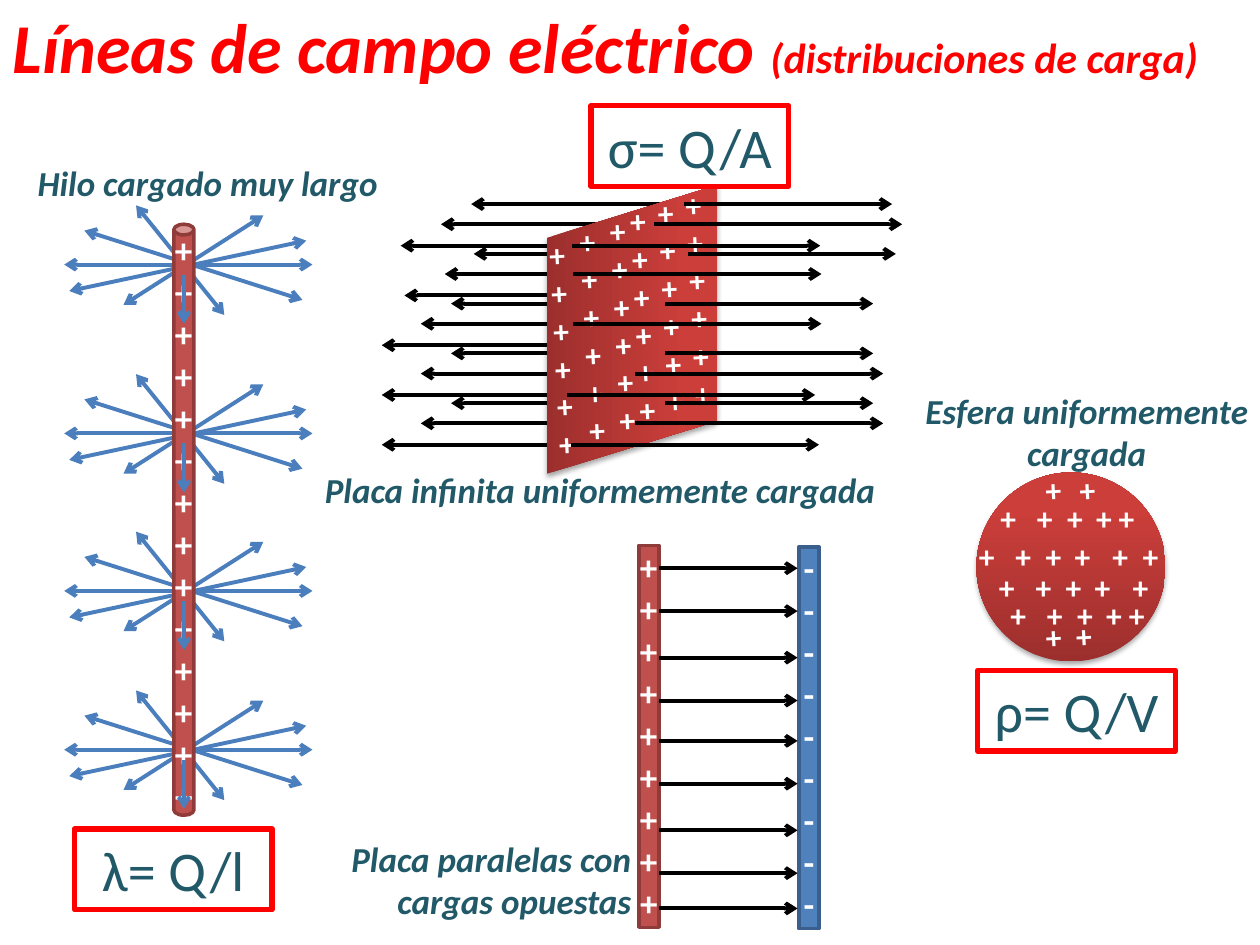
from collections import namedtuple

from lxml.etree import SubElement
from pptx import Presentation
from pptx.dml.color import RGBColor
from pptx.enum.shapes import MSO_CONNECTOR, MSO_SHAPE
from pptx.enum.text import MSO_ANCHOR, MSO_AUTO_SIZE, PP_ALIGN
from pptx.oxml.ns import qn
from pptx.util import Inches, Pt

COLORS = {
    "title": "FF0000", "label": "215968", "mark": "FFFFFF", "field": "000000",
    "ray": "4B7EBC", "positive": "C0504D", "positive edge": "8E3B39",
    "negative": "4F81BD", "negative edge": "3A5F8C",
    "dark red": "9C2F2D", "bright red": "CB3E3A", "shadow": "000000",
}
COLUMNS, ROWS = 100, 75
CELL = Inches(10) // COLUMNS
Box = namedtuple("Box", "left top width height")


def color(name):
    """Return the named colour."""
    return RGBColor.from_string(COLORS[name])


def within(box, left, top, width, height):
    """Return a box placed by its offset in cells from another box."""
    return Box(box.left + left, box.top + top, width, height)


def lengths(box):
    """Turn the cells of a box into slide lengths."""
    return [round(value * CELL) for value in box]


def write(shape, *runs, size=20, ink="label", bold=False, italic=False,
          align=PP_ALIGN.LEFT, anchor=MSO_ANCHOR.TOP, inset=None, tabs=()):
    """Put text in a shape; a run is a string or a (string, size) pair."""
    frame = shape.text_frame
    frame.word_wrap = True
    frame.auto_size = MSO_AUTO_SIZE.NONE
    frame.vertical_anchor = anchor
    if inset is not None:
        frame.margin_left = frame.margin_right = Inches(inset)
        frame.margin_top = frame.margin_bottom = Inches(inset)
    paragraph = frame.paragraphs[0]
    paragraph.alignment = align
    if tabs:
        stops = SubElement(paragraph._p.get_or_add_pPr(), qn("a:tabLst"))
        for position in tabs:
            SubElement(stops, qn("a:tab"), pos=str(round(position * CELL)), algn="l")
    for item in runs:
        text, points = (item, size) if isinstance(item, str) else item
        run = paragraph.add_run()
        run.text = text
        run.font.name = "Calibri"
        run.font.size = Pt(points)
        run.font.bold = bold
        run.font.italic = italic
        run.font.color.rgb = color(ink)


def add_text(slide, box, text, rotation=0, **formats):
    """Add a text box."""
    shape = slide.shapes.add_textbox(*lengths(box))
    shape.rotation = rotation
    write(shape, text, **formats)


def add_caption(slide, box, text, align=PP_ALIGN.LEFT):
    """Add the bold italic name of a charge distribution."""
    add_text(slide, box, text, bold=True, italic=True, align=align)


def add_marks(slide, box, text, **formats):
    """Add white charge marks."""
    add_text(slide, box, text, size=18, ink="mark", bold=True, **formats)


def add_body(slide, kind, box, fill=None, edge=None, width=2):
    """Add a preset shape with a flat fill and edge."""
    shape = slide.shapes.add_shape(kind, *lengths(box))
    shape.shadow.inherit = False
    if fill:
        shape.fill.solid()
        shape.fill.fore_color.rgb = color(fill)
    else:
        shape.fill.background()
    if edge:
        shape.line.color.rgb = color(edge)
        shape.line.width = Pt(width)
    else:
        shape.line.fill.background()
    return shape


def add_charged_body(slide, kind, box):
    """Add a red gradient shape with a soft shadow below."""
    shape = add_body(slide, kind, box)
    shape.fill.gradient()
    shape.fill.gradient_angle = 90
    stops = shape.fill.gradient_stops
    for stop, position, name in zip(stops, (0, 0.8), ("dark red", "bright red")):
        stop.position = position
        stop.color.rgb = color(name)
    effects = shape.element.spPr.find(qn("a:effectLst"))
    shadow = SubElement(effects, qn("a:outerShdw"), blurRad=str(Pt(3.1)),
                        dist=str(Pt(1.8)), dir="5400000", rotWithShape="0")
    ink = SubElement(shadow, qn("a:srgbClr"), val=COLORS["shadow"])
    SubElement(ink, qn("a:alpha"), val="35000")
    return shape


def add_arrow(slide, box, start, end, ink="field", double=False):
    """Add an arrow pointing at its start, or at both ends."""
    points = [round((origin + offset) * CELL) for point in (start, end)
              for origin, offset in zip(box, point)]
    arrow = slide.shapes.add_connector(MSO_CONNECTOR.STRAIGHT, *points)
    arrow.line.color.rgb = color(ink)
    arrow.line.width = Pt(2.25)
    line = arrow.line._get_or_add_ln()
    for tag in ("a:headEnd", "a:tailEnd") if double else ("a:headEnd",):
        SubElement(line, qn(tag), type="arrow")
    SubElement(arrow.element.spPr, qn("a:effectLst"))


def add_formula(slide, box, text):
    """Add a red frame with a charge density formula."""
    frame = add_body(slide, MSO_SHAPE.RECTANGLE, box, edge="title", width=3)
    write(frame, text, size=32, align=PP_ALIGN.CENTER)


def add_title(slide, box):
    """Place and fill the title placeholder."""
    title = slide.shapes.title
    title.left, title.top, title.width, title.height = lengths(box)
    write(title, "Líneas de campo eléctrico ", ("(distribuciones de carga)", 24),
          size=40, ink="title", bold=True, italic=True)


def add_wire(slide, box):
    """Draw the long charged wire with its fans of field lines."""
    centers = (8.7, 22.1, 34.6, 47.2)
    rays = (((0, 0), (19.7, 0)), ((0.4, 2.1), (19.2, -1.9)),
            ((1.6, -2.7), (18.9, 2.8)), ((4.7, 3.2), (15.8, -3.9)),
            ((5.7, -4.7), (12.7, 4)))
    for center in centers:
        hub = within(box, 0, center, 0, 0)
        for start, end in rays:
            add_arrow(slide, hub, start, end, "ray", double=True)
    wire = add_body(slide, MSO_SHAPE.CAN, within(box, 8.7, 5.5, 1.6, 46.9),
                    "positive", "positive edge")
    wire.adjustments[0] = 0.53
    write(wire, "+" * 14, ink="mark", bold=True, align=PP_ALIGN.CENTER,
          anchor=MSO_ANCHOR.MIDDLE, inset=0)
    for center in centers:
        add_arrow(slide, box, (9.5, center + 4.7), (9.5, center + 0.8), "ray")
    add_formula(slide, within(box, 0.8, 53.5, 15.7, 6.4), "λ= Q/l")
    add_caption(slide, within(box, -3.1, 0, 35.4, 4.4), "Hilo cargado muy largo")


def add_sheet_field(slide, box, tips, direction):
    """Draw groups of one short and two long field lines."""
    for group, group_tips in enumerate(tips):
        for tip, offset, length in zip(group_tips, (0, 1.6, 3.3), (16.5, 19.7, 19.7)):
            if tip is not None:
                height = 1.5 + 3.95 * group + offset
                add_arrow(slide, box, (tip, height), (tip + direction * length, height))


def add_sheet(slide, box):
    """Draw the infinite sheet with field lines on both sides."""
    low = (5.5, 3.1, 0)
    add_sheet_field(slide, box, ((7.1, 4.7, 1.5), (7.3, 5, 1.8), low, low, low), 1)
    sheet = add_charged_body(slide, MSO_SHAPE.PARALLELOGRAM,
                             within(box, 8.4, 4.7, 22.9, 13.5))
    sheet.adjustments[0] = 0.31
    sheet.rotation = 270
    sheet.element.spPr.get_or_add_xfrm().set("flipV", "1")
    for left, top in ((12.7, 3.5), (15.1, 2.4), (17.5, 1.6),
                      (19.1, 0.8), (21.3, 0.1), (23.5, -0.5)):
        add_marks(slide, within(box, left, top, 4.4, 19.2), "+ + + + + +", rotation=357.1)
    add_sheet_field(slide, box, ((40.5, 41.3, 34.8), (40.8, 34.9, None),
                                 (39, 34.9, None), (39, 39.8, 34.4),
                                 (39, 39.8, 34.7)), -1)
    add_formula(slide, within(box, 16.6, -6.3, 15.7, 6.4), "σ= Q/A")
    add_caption(slide, within(box, -5.5, 22, 52, 4.4),
                "Placa infinita uniformemente cargada")


def add_parallel_plates(slide, box):
    """Draw two opposite plates and the field between them."""
    for left, top, sign, name in ((0, 0, "+", "positive"), (12.7, 0.1, "-", "negative")):
        plate = add_body(slide, MSO_SHAPE.FLOWCHART_PROCESS,
                         within(box, left, top, 1.6, 30.3), name, name + " edge")
        write(plate, sign * 9, ink="mark", bold=True, align=PP_ALIGN.CENTER, inset=0)
    for height in (1.8, 5.2, 8.9, 12.3, 15.5, 18.9, 22.6, 26, 28.8):
        add_arrow(slide, box, (12.6, height), (1.6, height))
    add_caption(slide, within(box, -27.2, 22.7, 27.6, 7.7),
                "Placa paralelas con cargas opuestas", PP_ALIGN.RIGHT)


def add_sphere(slide, box):
    """Draw the uniformly charged sphere with rows of charges."""
    add_charged_body(slide, MSO_SHAPE.OVAL, box)
    for left in (4.5, 7.2):
        add_marks(slide, within(box, left, -0.7, 4.4, 4), "+", rotation=357.1)
    close, wide = (2.9, 5.3, 7.6, 9.4), (2.9, 5.3, 7.6, 10.6, 13)
    for left, top, tabs, rotation in (
            (0.9, 1.6, close, 0), (-0.8, 4.6, wide, 0), (4.5, 10.9, (2.4,), 357.1),
            (1.7, 9.3, close, 0), (0.8, 7.1, wide[:4], 0)):
        row = within(box, left, top, 8.7 if rotation else 16.5, 4)
        add_marks(slide, row, "\t".join("+" * (len(tabs) + 1)), tabs=tabs,
                  rotation=rotation)
    add_formula(slide, within(box, 0.1, 15.7, 15.7, 6.4), "ρ= Q/V")
    add_caption(slide, within(box, -6.2, -7.1, 29.9, 7.7),
                "Esfera uniformemente cargada", PP_ALIGN.CENTER)


def main():
    """Build the slide and save it."""
    presentation = Presentation()
    presentation.slide_width = COLUMNS * CELL
    presentation.slide_height = ROWS * CELL
    slide = presentation.slides.add_slide(presentation.slide_layouts[5])
    add_title(slide, Box(0, -0.2, 100, 7.7))
    add_wire(slide, Box(5.1, 12.3, 19.7, 60))
    add_sheet(slide, Box(30.3, 14.7, 41.3, 22.9))
    add_parallel_plates(slide, Box(50.7, 43.3, 14.3, 30.4))
    add_sphere(slide, Box(77.5, 37.5, 15, 15))
    presentation.save("out.pptx")


if __name__ == "__main__":
    main()
